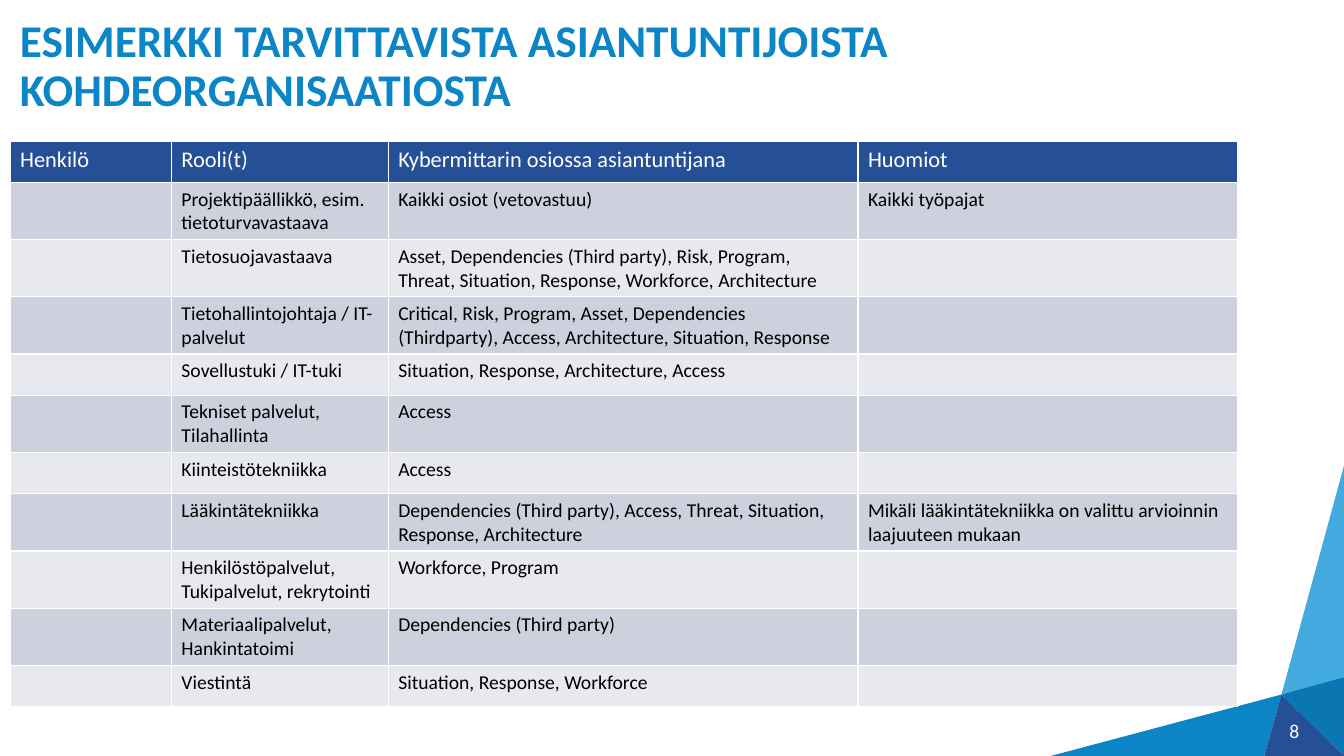
from lxml import etree
from pptx import Presentation
from pptx.dml.color import RGBColor
from pptx.enum.text import MSO_ANCHOR
from pptx.oxml.ns import qn
from pptx.util import Inches, Pt

MIDDLE = MSO_ANCHOR.MIDDLE
FONT = "Calibri"
COLORS = {
    "blue": "0B85C6", "sky": "43AAE0", "ocean": "0A76B2", "navy": "254F97",
    "band_dark": "CDD0DD", "band_light": "E8E9EF", "white": "FFFFFF", "black": "000000",
}


def style(p, size, color, bold=False):
    p.font.name = FONT
    p.font.size = Pt(size)
    p.font.bold = bold
    p.font.color.rgb = RGBColor.from_string(COLORS[color])


def add_text(text, left, top, width, height, size, color, bold=False):
    tf = s.shapes.add_textbox(Inches(left), Inches(top), Inches(width), Inches(height)).text_frame
    tf.word_wrap = True
    p = tf.paragraphs[0]
    p.text = text
    style(p, size, color, bold)
    return tf


prs = Presentation()
prs.slide_width = Inches(13.33)
prs.slide_height = Inches(7.5)
s = prs.slides.add_slide(prs.slide_layouts[6])

hub = (12.71, 6.89)
triangles = [
    ("sky", [(13.33, 6.73), hub, (13.33, 4.62)]),
    ("blue", [(12.54, 7.5), hub, (10.42, 7.5)]),
    ("ocean", [(13.33, 7.5), hub, (13.33, 6.72)]),
    ("navy", [(12.54, 7.5), hub, (13.33, 7.5)]),
]
for color, points in triangles:
    corners = [(Inches(x), Inches(y)) for x, y in points]
    fb = s.shapes.build_freeform(*corners[0])
    fb.add_line_segments(corners[1:], close=True)
    sp = fb.convert_to_shape()
    sp.shadow.inherit = False
    sp.fill.solid()
    sp.fill.fore_color.rgb = RGBColor.from_string(COLORS[color])
    sp.line.fill.background()

title = add_text("ESIMERKKI TARVITTAVISTA ASIANTUNTIJOISTA KOHDEORGANISAATIOSTA",
                 0.1, 0.39, 12.36, 0.55, 32.4, "blue", True)
title.vertical_anchor = MIDDLE
title.paragraphs[0].line_spacing = 0.9

rows = [
    ("Henkilö", "Rooli(t)", "Kybermittarin osiossa asiantuntijana", "Huomiot"),
    ("", "Projektipäällikkö, esim. tietoturvavastaava", "Kaikki osiot (vetovastuu)", "Kaikki työpajat"),
    ("", "Tietosuojavastaava",
     "Asset, Dependencies (Third party), Risk, Program, Threat, Situation, Response, Workforce, Architecture", ""),
    ("", "Tietohallintojohtaja / IT-palvelut",
     "Critical, Risk, Program, Asset, Dependencies (Thirdparty), Access, Architecture, Situation, Response", ""),
    ("", "Sovellustuki / IT-tuki", "Situation, Response, Architecture, Access", ""),
    ("", "Tekniset palvelut, Tilahallinta", "Access", ""),
    ("", "Kiinteistötekniikka", "Access", ""),
    ("", "Lääkintätekniikka",
     "Dependencies (Third party), Access, Threat, Situation, Response, Architecture",
     "Mikäli lääkintätekniikka on valittu arvioinnin laajuuteen mukaan"),
    ("", "Henkilöstöpalvelut, Tukipalvelut, rekrytointi", "Workforce, Program", ""),
    ("", "Materiaalipalvelut, Hankintatoimi", "Dependencies (Third party)", ""),
    ("", "Viestintä", "Situation, Response, Workforce", ""),
]
col_widths = [1.6, 2.15, 4.66, 3.76]
frame = s.shapes.add_table(len(rows), len(col_widths), Inches(0.1), Inches(1.4),
                           Inches(sum(col_widths)), Inches(5.59))
table = frame.table
for column, width in zip(table.columns, col_widths):
    column.width = Inches(width)

for i, row in enumerate(rows):
    table.rows[i].height = Inches(0.41)
    if i == 0:
        fill, size, color = "navy", 16, "white"
    else:
        fill, size, color = ("band_dark" if i % 2 else "band_light"), 14, "black"
    for j, text in enumerate(row):
        cell = table.cell(i, j)
        tcPr = cell._tc.get_or_add_tcPr()
        for side in ("a:lnL", "a:lnR", "a:lnT", "a:lnB"):
            ln = etree.SubElement(tcPr, qn(side), w=str(Pt(1)))
            line_fill = etree.SubElement(ln, qn("a:solidFill"))
            etree.SubElement(line_fill, qn("a:srgbClr"), val=COLORS["white"])
        cell.fill.solid()
        cell.fill.fore_color.rgb = RGBColor.from_string(COLORS[fill])
        if text:
            p = cell.text_frame.paragraphs[0]
            p.text = text
            style(p, size, color)
frame.height = Inches(5.59)

add_text("8", 12.69, 7.08, 0.33, 0.4, 14, "white")

prs.save("out.pptx")
